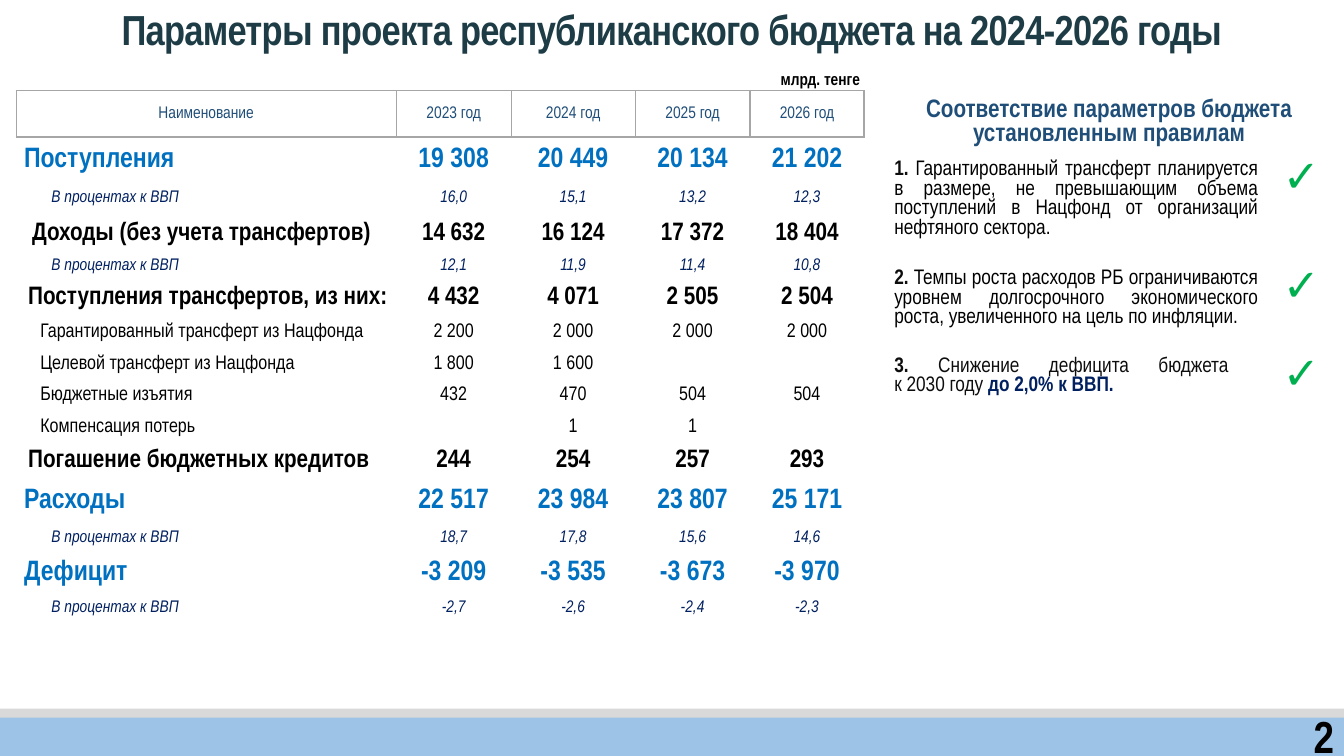
from dataclasses import dataclass

from lxml import etree
from pptx import Presentation, util as u
from pptx.dml.color import RGBColor
from pptx.enum import shapes, text
from pptx.oxml import ns

FONT = "Arial Narrow"
NO_STYLE = "{2D5ABB26-0587-4C30-8999-92F81FD0307C}"
BLACK = RGBColor(0x00, 0x00, 0x00)
INK = RGBColor(0x0D, 0x0D, 0x0D)
TEAL = RGBColor(0x1D, 0x3C, 0x45)
HEADING = RGBColor(0x1F, 0x4E, 0x79)
BLUE = RGBColor(0x00, 0x70, 0xC0)
NAVY = RGBColor(0x00, 0x20, 0x60)
GREEN = RGBColor(0x00, 0xB0, 0x50)
GREY = RGBColor(0xD9, 0xD9, 0xD9)
BORDER = RGBColor(0xA6, 0xA6, 0xA6)
SKY = RGBColor(0x9D, 0xC3, 0xE6)
LEFT, CENTER, RIGHT, JUSTIFY = (text.PP_ALIGN.LEFT, text.PP_ALIGN.CENTER,
                                text.PP_ALIGN.RIGHT, text.PP_ALIGN.JUSTIFY)
MIDDLE, TOP = text.MSO_ANCHOR.MIDDLE, text.MSO_ANCHOR.TOP


@dataclass(frozen=True)
class Style:
    size: float
    color: RGBColor
    bold: bool = False
    italic: bool = False


@dataclass(frozen=True)
class BudgetRow:
    name: str
    values: tuple[str, ...]
    height: float
    indent: float
    style: Style


@dataclass(frozen=True)
class Rule:
    lines: tuple[tuple[tuple[str, Style], ...], ...]
    height: float


@dataclass(frozen=True)
class Label:
    words: str
    box: tuple[float, float, float, float]
    align: text.PP_ALIGN
    style: Style
    line_spacing: float = 1.0
    tracking: int = 0


HEAD = Style(12, HEADING)
TOTAL = Style(20, BLUE, bold=True)
GROUP = Style(18, BLACK, bold=True)
ITEM = Style(14, BLACK)
SHARE = Style(12, NAVY, italic=True)
NUMBER = Style(15, INK, bold=True)
BODY = Style(15, BLACK)
FADED = Style(15, INK)
TARGET = Style(15, NAVY, bold=True)
CHECK = Style(32, GREEN)
RULES_HEAD = Style(18, HEADING, bold=True)

SHARE_NAME = "В процентах к ВВП"
BUDGET_WIDTHS = (3.77, 1.14, 1.23, 1.14, 1.13)
BUDGET = (
    BudgetRow("Наименование", ("2023 год", "2024 год", "2025 год", "2026 год"), 0.46, 0.01, HEAD),
    BudgetRow("Поступления", ("19 308", "20 449", "20 134", "21 202"), 0.45, 0.08, TOTAL),
    BudgetRow(SHARE_NAME, ("16,0", "15,1", "13,2", "12,3"), 0.31, 0.35, SHARE),
    BudgetRow("Доходы (без учета трансфертов)", ("14 632", "16 124", "17 372", "18 404"), 0.39, 0.16, GROUP),
    BudgetRow(SHARE_NAME, ("12,1", "11,9", "11,4", "10,8"), 0.26, 0.35, SHARE),
    BudgetRow("Поступления трансфертов, из них:", ("4 432", "4 071", "2 505", "2 504"), 0.36, 0.12, GROUP),
    BudgetRow("Гарантированный трансферт из Нацфонда", ("2 200", "2 000", "2 000", "2 000"), 0.32, 0.24, ITEM),
    BudgetRow("Целевой трансферт из Нацфонда", ("1 800", "1 600", "", ""), 0.31, 0.24, ITEM),
    BudgetRow("Бюджетные изъятия", ("432", "470", "504", "504"), 0.31, 0.24, ITEM),
    BudgetRow("Компенсация потерь", ("", "1", "1", ""), 0.31, 0.24, ITEM),
    BudgetRow("Погашение бюджетных кредитов", ("244", "254", "257", "293"), 0.36, 0.12, GROUP),
    BudgetRow("Расходы", ("22 517", "23 984", "23 807", "25 171"), 0.43, 0.08, TOTAL),
    BudgetRow(SHARE_NAME, ("18,7", "17,8", "15,6", "14,6"), 0.3, 0.35, SHARE),
    BudgetRow("Дефицит", ("-3 209", "-3 535", "-3 673", "-3 970"), 0.41, 0.08, TOTAL),
    BudgetRow(SHARE_NAME, ("-2,7", "-2,6", "-2,4", "-2,3"), 0.27, 0.35, SHARE),
)
RULES_TITLE = "Соответствие параметров бюджета установленным правилам"
RULES = (
    Rule(((("1. ", NUMBER), ("Гарантированный трансферт планируется в размере, не превышающим объема "
                             "поступлений в Нацфонд от организаций нефтяного сектора.", BODY)),), 1.08),
    Rule(((("2. ", NUMBER), ("Темпы роста расходов РБ ограничиваются уровнем долгосрочного "
                             "экономического роста, увеличенного на цель по инфляции.", BODY)),), 0.87),
    Rule(((("3. ", NUMBER), ("Снижение дефицита бюджета ", FADED)),
          (("к 2030 году ", FADED), ("до 2,0% к ВВП.", TARGET))), 0.53),
)
LABELS = (
    Label("Параметры проекта республиканского бюджета на 2024-2026 годы", (0, 0.03, 13.33, 0.58),
          CENTER, Style(30, TEAL, bold=True), 0.85, -50),
    Label("2", (0, 7.1, 13.33, 0.4), RIGHT, Style(32, BLACK, bold=True)),
    Label("млрд. тенге", (6.81, 0.61, 1.82, 0.37), RIGHT, Style(12, BLACK, bold=True), 0.9),
)


def add_run(p, words: str, style: Style):
    r = p.add_run()
    r.text = words
    r.font.name = FONT
    r.font.size = u.Pt(style.size)
    r.font.bold = style.bold
    r.font.italic = style.italic
    r.font.color.rgb = style.color
    return r


def add_bar(s, top: float, height: float, color: RGBColor) -> None:
    sp = s.shapes.add_shape(shapes.MSO_SHAPE.RECTANGLE, 0, u.Inches(top), u.Inches(13.33), u.Inches(height))
    sp.shadow.inherit = False
    sp.fill.solid()
    sp.fill.fore_color.rgb = color
    sp.line.fill.background()


def add_label(s, label: Label) -> None:
    sp = s.shapes.add_textbox(*map(u.Inches, label.box))
    tf = sp.text_frame
    tf.word_wrap = True
    tf.vertical_anchor = MIDDLE
    p = tf.paragraphs[0]
    p.alignment = label.align
    p.line_spacing = label.line_spacing
    r = add_run(p, label.words, label.style)
    if label.tracking:
        r.font._element.set("spc", str(label.tracking))


def add_grid(s, left: float, widths: tuple[float, ...], heights: tuple[float, ...]):
    table = s.shapes.add_table(len(heights), len(widths), u.Inches(left), u.Inches(0.9),
                               u.Inches(sum(widths)), u.Inches(sum(heights))).table
    table.first_row = table.horz_banding = False
    table._tbl.tblPr.find(ns.qn("a:tableStyleId")).text = NO_STYLE
    for column, width in zip(table.columns, widths):
        column.width = u.Inches(width)
    for row, height in zip(table.rows, heights):
        row.height = u.Inches(height)
    return table


def set_margins(cell, left: float) -> None:
    cell.margin_left = u.Inches(left)
    cell.margin_top = cell.margin_right = u.Inches(0.01)
    cell.margin_bottom = 0


def add_borders(cell) -> None:
    tc_pr = cell._tc.get_or_add_tcPr()
    for index, side in enumerate(("lnL", "lnR", "lnT", "lnB")):
        ln = etree.Element(ns.qn(f"a:{side}"), w=str(u.Pt(1)))
        fill = etree.SubElement(ln, ns.qn("a:solidFill"))
        etree.SubElement(fill, ns.qn("a:srgbClr"), val=str(BORDER))
        tc_pr.insert(index, ln)


def write_cell(cell, lines, align: text.PP_ALIGN, anchor=MIDDLE) -> None:
    cell.fill.background()
    cell.vertical_anchor = anchor
    p = cell.text_frame.paragraphs[0]
    p.alignment = align
    for index, line in enumerate(lines):
        if index:
            p.add_line_break()
        for words, style in line:
            if words:
                add_run(p, words, style)


def add_check(cell) -> None:
    write_cell(cell, (((" ", CHECK),),), LEFT, TOP)
    p_pr = cell.text_frame.paragraphs[0]._p.get_or_add_pPr()
    p_pr.set("marL", str(u.Inches(0.35)))
    p_pr.set("indent", str(u.Inches(-0.31)))
    color = etree.SubElement(p_pr, ns.qn("a:buClr"))
    etree.SubElement(color, ns.qn("a:srgbClr"), val=str(CHECK.color))
    etree.SubElement(p_pr, ns.qn("a:buFont"), typeface=FONT)
    etree.SubElement(p_pr, ns.qn("a:buChar"), char="✓")


def add_budget(s) -> None:
    table = add_grid(s, 0.16, BUDGET_WIDTHS, tuple(row.height for row in BUDGET))
    for i, row in enumerate(BUDGET):
        for j, words in enumerate((row.name, *row.values)):
            cell = table.cell(i, j)
            set_margins(cell, 0.01 if j else row.indent)
            write_cell(cell, (((words, row.style),),), CENTER if j or i == 0 else LEFT)
            if i == 0:
                add_borders(cell)


def add_rules(s) -> None:
    table = add_grid(s, 8.77, (3.81, 0.65), (0.64, *(rule.height for rule in RULES)))
    table.cell(0, 0).merge(table.cell(0, 1))
    write_cell(table.cell(0, 0), (((RULES_TITLE, RULES_HEAD),),), CENTER)
    for i, rule in enumerate(RULES, 1):
        write_cell(table.cell(i, 0), rule.lines, JUSTIFY, TOP)
        add_check(table.cell(i, 1))


def main() -> None:
    prs = Presentation()
    prs.slide_width, prs.slide_height = u.Inches(13.33), u.Inches(7.5)
    s = prs.slides.add_slide(prs.slide_layouts[6])
    add_bar(s, 7.03, 0.11, GREY)
    add_bar(s, 7.12, 0.4, SKY)
    add_budget(s)
    add_rules(s)
    for label in LABELS:
        add_label(s, label)
    prs.save("out.pptx")


if __name__ == "__main__":
    main()
